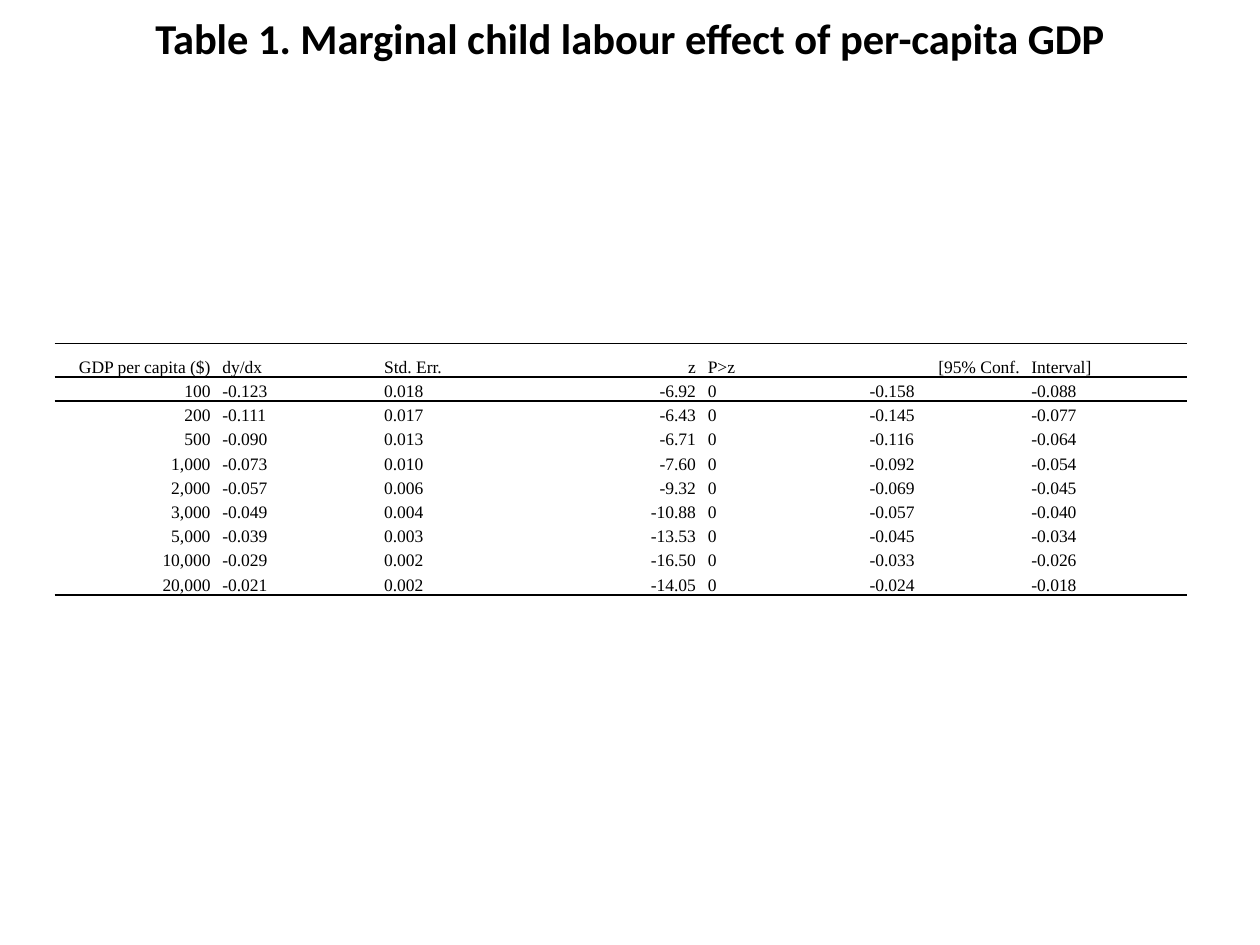
import dataclasses

import lxml.etree
import pptx
import pptx.dml.color
import pptx.enum.text
import pptx.oxml.ns
import pptx.util

Cm = pptx.util.Cm
Pt = pptx.util.Pt
ALIGN = pptx.enum.text.PP_ALIGN
ANCHOR = pptx.enum.text.MSO_ANCHOR
qn = pptx.oxml.ns.qn

BLACK = "000000"
NO_STYLE = "{2D5ABB26-0587-4C30-8999-92F81FD0307C}"


@dataclasses.dataclass(frozen=True)
class Column:
    heading: str
    values: list[str]
    heading_align: ALIGN = ALIGN.LEFT
    align: ALIGN = ALIGN.LEFT


COLUMNS = [
    Column("GDP per capita ($)",
           ["100", "200", "500", "1,000", "2,000", "3,000", "5,000", "10,000", "20,000"],
           ALIGN.RIGHT, ALIGN.RIGHT),
    Column("dy/dx",
           ["-0.123", "-0.111", "-0.090", "-0.073", "-0.057", "-0.049", "-0.039", "-0.029", "-0.021"]),
    Column("Std. Err.",
           ["0.018", "0.017", "0.013", "0.010", "0.006", "0.004", "0.003", "0.002", "0.002"]),
    Column("z",
           ["-6.92", "-6.43", "-6.71", "-7.60", "-9.32", "-10.88", "-13.53", "-16.50", "-14.05"],
           ALIGN.RIGHT, ALIGN.RIGHT),
    Column("P>z", ["0"] * 9),
    Column("[95% Conf.",
           ["-0.158", "-0.145", "-0.116", "-0.092", "-0.069", "-0.057", "-0.045", "-0.033", "-0.024"],
           ALIGN.RIGHT),
    Column("Interval]",
           ["-0.088", "-0.077", "-0.064", "-0.054", "-0.045", "-0.040", "-0.034", "-0.026", "-0.018"],
           ALIGN.JUSTIFY),
]


def rgb(color: str) -> pptx.dml.color.RGBColor:
    return pptx.dml.color.RGBColor.from_string(color)


def set_text(p, text: str, font: str, size: float, align: ALIGN, bold: bool = False) -> None:
    p.text = text
    p.alignment = align
    for r in p.runs:
        r.font.name = font
        r.font.size = Pt(size)
        r.font.bold = bold
        r.font.color.rgb = rgb(BLACK)


def add_border(cell, side: str) -> None:
    ln = lxml.etree.SubElement(cell._tc.get_or_add_tcPr(), qn(f"a:{side}"), w=str(Pt(1)))
    fill = lxml.etree.SubElement(ln, qn("a:solidFill"))
    lxml.etree.SubElement(fill, qn("a:srgbClr"), val=BLACK)


def fill_cell(cell, text: str, align: ALIGN, borders: list[str]) -> None:
    cell.margin_left = cell.margin_right = Cm(0.12)
    cell.margin_top = cell.margin_bottom = 0
    cell.vertical_anchor = ANCHOR.BOTTOM
    p = cell.text_frame.paragraphs[0]
    set_text(p, text, "Times New Roman", 10, align)
    p.line_spacing = 1.15
    for side in borders:
        add_border(cell, side)
    cell.fill.background()


def add_title(s, text: str) -> None:
    sp = s.shapes.add_textbox(Cm(1.27), Cm(0.1), Cm(22.86), Cm(1.3))
    tf = sp.text_frame
    tf.word_wrap = True
    tf.vertical_anchor = ANCHOR.MIDDLE
    set_text(tf.paragraphs[0], text, "Calibri", 24.3, ALIGN.CENTER, bold=True)


def add_effects_table(s, columns: list[Column]) -> None:
    last = len(columns[0].values)
    head_h, row_h, col_w = Cm(0.68), Cm(0.44), Cm(22.84) // len(columns)
    sp = s.shapes.add_table(last + 1, len(columns), Cm(1.1), Cm(6.92),
                            col_w * len(columns), head_h + row_h * last)
    table = sp.table
    table.first_row = table.horz_banding = False
    table._tbl.tblPr.find(qn("a:tableStyleId")).text = NO_STYLE
    for i, row in enumerate(table.rows):
        row.height = row_h if i else head_h
    borders = {0: ["lnT", "lnB"], 1: ["lnT"], last: ["lnB"]}
    for j, column in enumerate(columns):
        table.columns[j].width = col_w
        for i, text in enumerate([column.heading, *column.values]):
            align = column.align if i else column.heading_align
            fill_cell(table.cell(i, j), text, align, borders.get(i, []))


prs = pptx.Presentation()
prs.slide_width, prs.slide_height = Cm(25.4), Cm(19.05)
s = prs.slides.add_slide(prs.slide_layouts[6])
add_title(s, "Table 1. Marginal child labour effect of per-capita GDP")
add_effects_table(s, COLUMNS)
prs.save("out.pptx")
